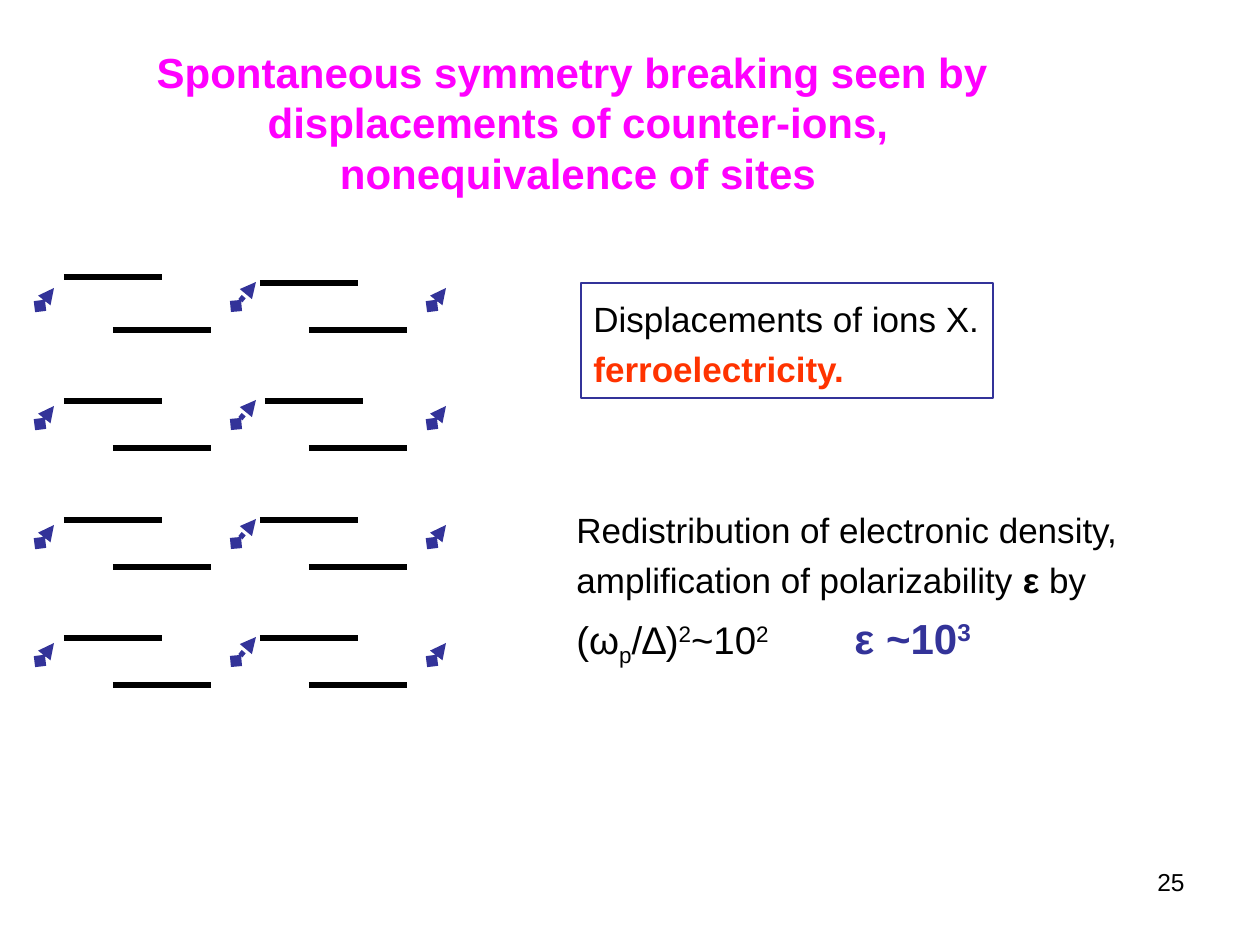
from dataclasses import dataclass

from lxml import etree
from pptx import Presentation
from pptx.dml.color import RGBColor
from pptx.enum.dml import MSO_LINE
from pptx.enum.shapes import MSO_CONNECTOR, MSO_SHAPE
from pptx.enum.text import MSO_ANCHOR, MSO_AUTO_SIZE, PP_ALIGN
from pptx.oxml.ns import qn
from pptx.util import Emu, Pt

STRAIGHT = MSO_CONNECTOR.STRAIGHT
RECTANGLE = MSO_SHAPE.RECTANGLE
DOTTED = MSO_LINE.ROUND_DOT
TOP = MSO_ANCHOR.TOP
NO_AUTOFIT = MSO_AUTO_SIZE.NONE
LEFT, CENTER, RIGHT = PP_ALIGN.LEFT, PP_ALIGN.CENTER, PP_ALIGN.RIGHT
TITLE_ONLY = 5
EMU_PER_PX = 914400 / 126


@dataclass(frozen=True)
class Theme:
    font: str = "Arial"
    black: str = "000000"
    blue: str = "333399"
    red: str = "FF3300"
    magenta: str = "FF00FF"
    title: int = 24
    body: int = 20
    formula: int = 22
    number: int = 14
    spacing: float = 1.2
    line: int = 3
    border: float = 0.75


THEME = Theme()


def px(value):
    return Emu(round(value * EMU_PER_PX))


def color(value):
    return RGBColor.from_string(value)


def place(shape, box):
    for name, value in zip(("left", "top", "width", "height"), box):
        setattr(shape, name, px(value))


def add_run(paragraph, text, size, ink=THEME.black, bold=False, baseline=0):
    run = paragraph.add_run()
    run.text = text
    for name, value in {"name": THEME.font, "size": Pt(size), "bold": bold}.items():
        setattr(run.font, name, value)
    run.font.color.rgb = color(ink)
    if baseline:
        run._r.get_or_add_rPr().set("baseline", str(baseline * 1000))


def write(shape, paragraphs, align=LEFT, spacing=1.0, wrap=True):
    """Each paragraph is a list of runs, each run the arguments of add_run."""
    frame = shape.text_frame
    frame_format = {"word_wrap": wrap, "auto_size": NO_AUTOFIT, "vertical_anchor": TOP}
    for name, value in frame_format.items():
        setattr(frame, name, value)
    for index, runs in enumerate(paragraphs):
        paragraph = frame.add_paragraph() if index else frame.paragraphs[0]
        paragraph.alignment = align
        paragraph.line_spacing = spacing
        for run in runs:
            add_run(paragraph, *run)


def add_text(slide, box, paragraphs, **options):
    shape = slide.shapes.add_textbox(*map(px, box))
    write(shape, paragraphs, **options)
    return shape


def add_tab_stop(paragraph, position):
    tabs = etree.SubElement(paragraph._p.get_or_add_pPr(), qn("a:tabLst"))
    etree.SubElement(tabs, qn("a:tab"), pos=str(px(position)), algn="l")


def add_line(slide, start, end, ink=THEME.black):
    line = slide.shapes.add_connector(STRAIGHT, *map(px, start + end))
    line.line.color.rgb = color(ink)
    line.line.width = Pt(THEME.line)
    etree.SubElement(line._element.spPr, qn("a:effectLst"))
    return line


def add_displacement(slide, start, end, dotted):
    arrow = add_line(slide, start, end, THEME.blue)
    if dotted:
        arrow.line.dash_style = DOTTED
    outline = arrow.line._get_or_add_ln()
    for tag, kind in (("a:headEnd", "diamond"), ("a:tailEnd", "triangle")):
        etree.SubElement(outline, qn(tag), type=kind)


def add_lattice(slide):
    column_pitch, bar_length = 196, 98
    shifted_bars = {(0, 0): (0, -6), (1, 1): (5, 0)}
    for row in range(4):
        lower = 330 + 237 * row // 2
        # Molecule bars: an upper and a lower one in each cell
        for column in range(2):
            shift_x, shift_y = shifted_bars.get((row, column), (0, 0))
            left = 64 + column * column_pitch
            bars = ((left + shift_x, lower - 47 + shift_y), (left + 49, lower))
            for x, y in bars:
                add_line(slide, (x, y), (x + bar_length, y))
        # Ion displacements: the middle column is longer and dotted
        for column in range(3):
            dotted = column == 1
            x, y = 40 + column * column_pitch, lower - 24
            run, rise = (20, 24) if dotted else (14, 18)
            add_displacement(slide, (x, y), (x + run, y - rise), dotted)


def add_framed_text(slide, box, paragraphs):
    frame = slide.shapes.add_shape(RECTANGLE, *map(px, box))
    frame.shadow.inherit = False
    frame.fill.background()
    frame.line.color.rgb = color(THEME.blue)
    frame.line.width = Pt(THEME.border)
    write(frame, paragraphs, spacing=THEME.spacing, wrap=False)


def main():
    presentation = Presentation()
    presentation.slide_width, presentation.slide_height = px(1260), px(945)
    slide = presentation.slides.add_slide(presentation.slide_layouts[TITLE_ONLY])

    # Title
    title_lines = (
        "Spontaneous symmetry breaking seen by ",
        "displacements of counter-ions,",
        "nonequivalence of sites",
    )
    title = slide.shapes.title
    place(title, (30, 40, 1096, 165))
    write(title, [[(line, THEME.title, THEME.magenta, True)] for line in title_lines],
          align=CENTER)

    # Diagram
    add_lattice(slide)

    # Conclusions
    add_framed_text(slide, (581, 283, 412, 115), [
        [("Displacements of ions X.", THEME.body)],
        [("ferroelectricity.", THEME.body, THEME.red, True)],
    ])
    density = add_text(slide, (564, 494, 659, 175), [[
        ("Redistribution of electronic density, amplification of polarizability ",
         THEME.body),
        ("ε ", THEME.body, THEME.black, True),
        ("by ", THEME.body),
        ("(ω", THEME.formula),
        ("p", THEME.formula, THEME.black, False, -25),
        ("/∆)", THEME.formula),
        ("2", THEME.formula, THEME.black, False, 30),
        ("~10", THEME.formula),
        ("2", THEME.formula, THEME.black, False, 30),
        ("\t", THEME.formula),
        ("ε ~10", THEME.title, THEME.blue, True),
        ("3", THEME.title, THEME.blue, True, 30),
    ]], spacing=THEME.spacing)
    add_tab_stop(density.text_frame.paragraphs[0], 278)

    # Slide number
    add_text(slide, (903, 861, 294, 66), [[("25", THEME.number)]], align=RIGHT)

    presentation.save("out.pptx")


if __name__ == "__main__":
    main()
